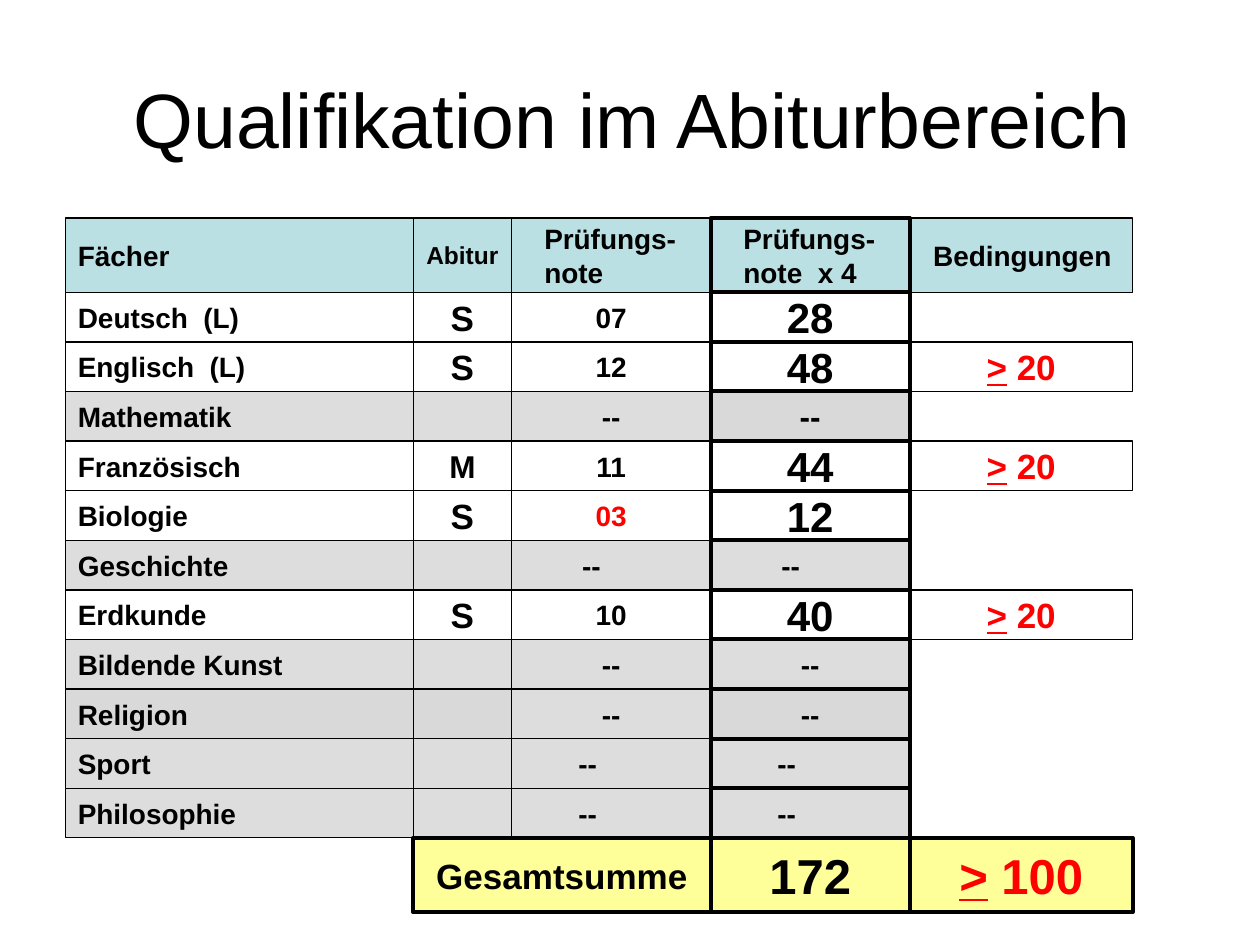
from dataclasses import dataclass
from typing import Optional

from pptx import Presentation
from pptx.dml.color import RGBColor
from pptx.enum.shapes import MSO_SHAPE
from pptx.enum.text import MSO_ANCHOR, PP_ALIGN
from pptx.util import Inches, Pt

FONT = "Arial"
BLACK, WHITE, RED = "000000", "FFFFFF", "FF0000"
HEADER_BLUE, SUM_YELLOW = "BBE0E3", "FFFF99"
GREY, LIGHT_GREY = "DDDDDD", "D9D9D9"
THIN, THICK = 0.75, 2.25

COLUMN_EDGES = [0.52, 3.28, 4.06, 5.64, 7.22, 8.99]
SUBJECT, EXAM, GRADE, RESULT, CONDITION = range(5)
HEADER_TOP, FIRST_TOP, SUM_TOP, TALL = 1.73, 2.32, 6.65, 0.59


@dataclass
class Run:
    text: str
    size: float = 16
    color: str = BLACK
    bold: bool = True
    underline: bool = False


@dataclass
class Subject:
    name: str
    exam: str = ""
    grade: Optional[int] = None
    fill: Optional[str] = None
    result_fill: Optional[str] = None
    minimum: Optional[int] = None
    grade_color: str = BLACK
    exam_size: float = 20
    dash_size: float = 16
    dash_inset: float = 0.1


@dataclass
class Header:
    text: str
    size: float = 16
    align: PP_ALIGN = PP_ALIGN.CENTER
    left_inset: float = 0.1
    line_width: float = THIN


HEADERS = {
    SUBJECT: Header("Fächer", align=PP_ALIGN.LEFT),
    EXAM: Header("Abitur", size=14, left_inset=0.08),
    GRADE: Header("Prüfungs-note", align=PP_ALIGN.LEFT, left_inset=0.26),
    CONDITION: Header("Bedingungen"),
    RESULT: Header("Prüfungs-note  x 4", align=PP_ALIGN.LEFT, left_inset=0.26,
                   line_width=THICK),
}

SUBJECTS = [
    Subject("Deutsch  (L)", "S", 7),
    Subject("Englisch  (L)", "S", 12, minimum=20),
    Subject("Mathematik", fill=GREY, result_fill=LIGHT_GREY, dash_size=18),
    Subject("Französisch", "M", 11, fill=WHITE, minimum=20, exam_size=18),
    Subject("Biologie", "S", 3, grade_color=RED),
    Subject("Geschichte", fill=GREY, dash_inset=0.41),
    Subject("Erdkunde", "S", 10, fill=WHITE, minimum=20),
    Subject("Bildende Kunst", fill=GREY),
    Subject("Religion", fill=LIGHT_GREY),
    Subject("Sport", fill=GREY, dash_inset=0.47),
    Subject("Philosophie", fill=GREY, dash_inset=0.47),
]
ROW_HEIGHT = (SUM_TOP - FIRST_TOP) / len(SUBJECTS)


def rgb(value: str) -> RGBColor:
    return RGBColor.from_string(value)


def write(shape, runs: list[Run], align: PP_ALIGN,
          left_inset: float = 0.1, right_inset: float = 0.1) -> None:
    frame = shape.text_frame
    frame.word_wrap = True
    frame.vertical_anchor = MSO_ANCHOR.MIDDLE
    frame.margin_left, frame.margin_right = Inches(left_inset), Inches(right_inset)
    frame.margin_top = frame.margin_bottom = 0
    paragraph = frame.paragraphs[0]
    paragraph.alignment = align
    for item in runs:
        run = paragraph.add_run()
        run.text = item.text
        run.font.name = FONT
        run.font.size = Pt(item.size)
        run.font.bold = item.bold
        run.font.underline = item.underline
        run.font.color.rgb = rgb(item.color)


def add_cell(slide, column: int, top: float, height: float, runs: list[Run],
             fill: Optional[str] = None, line_width: float = THIN, span: int = 1,
             align: PP_ALIGN = PP_ALIGN.CENTER,
             left_inset: float = 0.1, right_inset: float = 0.1) -> None:
    left = COLUMN_EDGES[column]
    width = COLUMN_EDGES[column + span] - left
    shape = slide.shapes.add_shape(MSO_SHAPE.RECTANGLE, Inches(left), Inches(top),
                                   Inches(width), Inches(height))
    shape.shadow.inherit = False
    if fill:
        shape.fill.solid()
        shape.fill.fore_color.rgb = rgb(fill)
    else:
        shape.fill.background()
    shape.line.color.rgb = rgb(BLACK)
    shape.line.width = Pt(line_width)
    if runs:
        write(shape, runs, align, left_inset, right_inset)


def at_least(value: int, size: float) -> list[Run]:
    """Return the runs of a red "at least" condition with an underlined sign."""
    return [Run(">", size, RED, underline=True), Run(f" {value}", size, RED)]


def add_subject_cell(slide, column: int, top: float, subject: Subject) -> None:
    graded = subject.grade is not None
    place = (slide, column, top, ROW_HEIGHT)
    inset = 0.1 if graded else subject.dash_inset
    if column == SUBJECT:
        add_cell(*place, [Run(subject.name)], subject.fill, align=PP_ALIGN.LEFT)
    elif column == EXAM:
        runs = [Run(subject.exam, subject.exam_size)] if subject.exam else []
        add_cell(*place, runs, subject.fill)
    elif column == GRADE:
        text = f"{subject.grade:02d}" if graded else "--"
        add_cell(*place, [Run(text, color=subject.grade_color)],
                 subject.fill if graded else GREY, right_inset=inset)
    elif column == RESULT:
        run = Run(str(subject.grade * 4), 24) if graded else Run("--", subject.dash_size)
        add_cell(*place, [run], subject.result_fill or subject.fill, THICK,
                 right_inset=inset)
    elif subject.minimum is not None:
        add_cell(*place, at_least(subject.minimum, 20))


def add_sum_row(slide) -> None:
    total = sum(subject.grade * 4 for subject in SUBJECTS if subject.grade is not None)
    for column, span, runs in [
        (EXAM, 2, [Run("Gesamtsumme", 20)]),
        (RESULT, 1, [Run(str(total), 28)]),
        (CONDITION, 1, at_least(100, 28)),
    ]:
        add_cell(slide, column, SUM_TOP, TALL, runs, SUM_YELLOW, THICK, span)


def main() -> None:
    presentation = Presentation()
    presentation.slide_width, presentation.slide_height = Inches(10), Inches(7.5)
    slide = presentation.slides.add_slide(presentation.slide_layouts[6])

    title = slide.shapes.add_textbox(Inches(0.52), Inches(0.31), Inches(9), Inches(1.25))
    write(title, [Run("Qualifikation im Abiturbereich", 44, bold=False)], PP_ALIGN.CENTER)

    # The thick-lined result column comes last so that its borders stay on top.
    for column, header in HEADERS.items():
        add_cell(slide, column, HEADER_TOP, TALL, [Run(header.text, header.size)],
                 HEADER_BLUE, header.line_width, align=header.align,
                 left_inset=header.left_inset, right_inset=0.08)
        for row, subject in enumerate(SUBJECTS):
            add_subject_cell(slide, column, FIRST_TOP + row * ROW_HEIGHT, subject)
    add_sum_row(slide)
    presentation.save("out.pptx")


if __name__ == "__main__":
    main()
